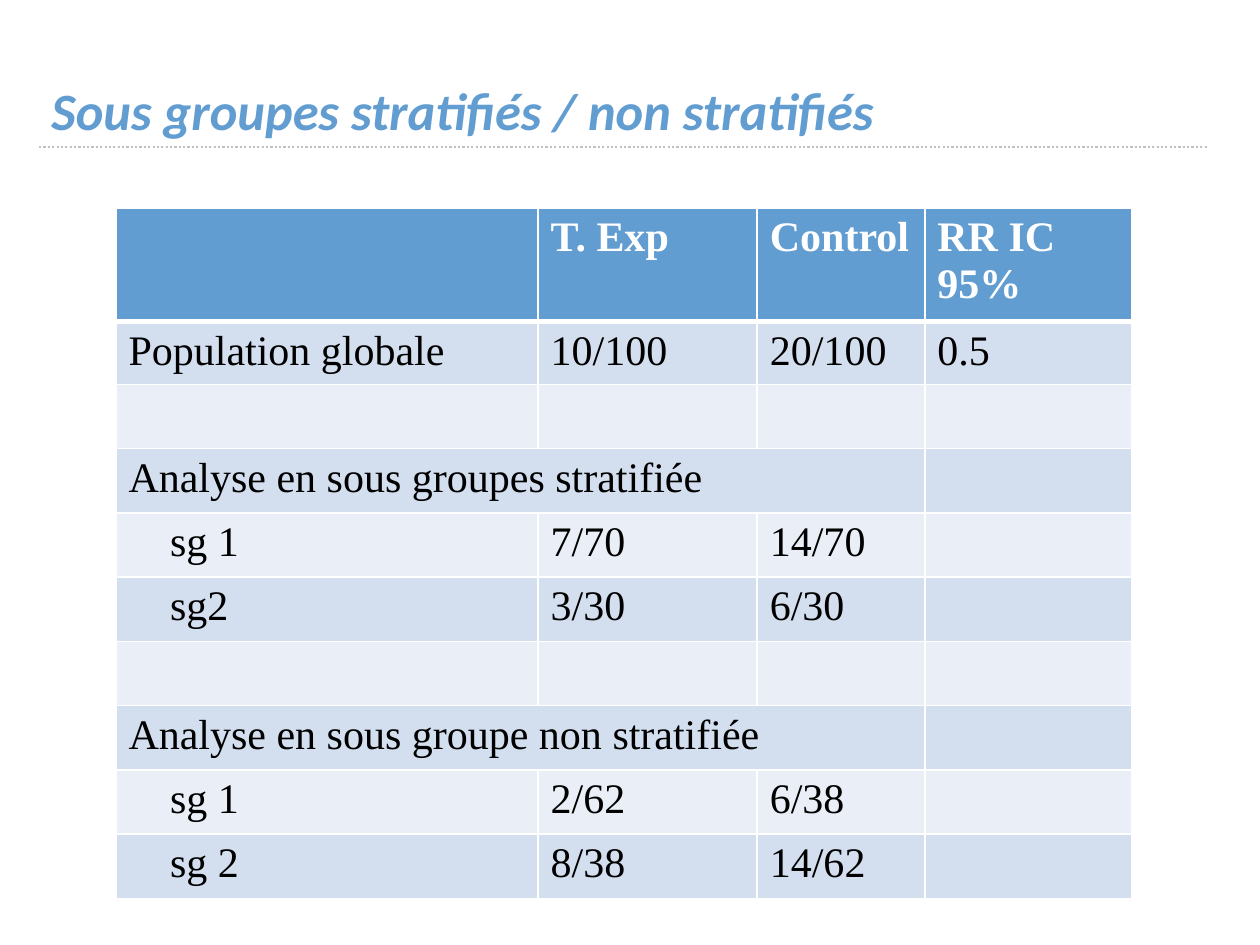
from lxml.etree import SubElement
from pptx import Presentation
from pptx.dml.color import RGBColor
from pptx.enum.dml import MSO_LINE
from pptx.enum.shapes import MSO_CONNECTOR
from pptx.enum.text import MSO_ANCHOR
from pptx.oxml import parse_xml
from pptx.oxml.ns import nsdecls, qn
from pptx.util import Inches, Pt

BLUE = RGBColor(0x62, 0x9D, 0xD1)
DARK_BAND = RGBColor(0xD3, 0xDF, 0xEE)
LIGHT_BAND = RGBColor(0xEA, 0xEF, 0xF7)
WHITE = RGBColor(0xFF, 0xFF, 0xFF)
BLACK = RGBColor(0, 0, 0)
GREY = RGBColor(0xC0, 0xC0, 0xC0)

TITLE = "Sous groupes stratifiés / non stratifiés"
ROWS = [
    ("", "T. Exp", "Control", "RR IC 95%"),
    ("Population globale", "10/100", "20/100", "0.5"),
    ("", "", "", ""),
    ("Analyse en sous groupes stratifiée", "", "", ""),
    ("sg 1", "7/70", "14/70", ""),
    ("sg2", "3/30", "6/30", ""),
    ("", "", "", ""),
    ("Analyse en sous groupe non stratifiée", "", "", ""),
    ("sg 1", "2/62", "6/38", ""),
    ("sg 2", "8/38", "14/62", ""),
]
COLUMN_WIDTHS = [3.35, 1.74, 1.33, 1.64]
ROW_HEIGHTS = [0.83, 0.47] + [0.51] * (len(ROWS) - 2)


def add_run(paragraph, text, font_name, size, color, bold=False, italic=False):
    run = paragraph.add_run()
    run.text = text
    run.font.name = font_name
    run.font.size = Pt(size)
    run.font.color.rgb = color
    run.font.bold = bold
    run.font.italic = italic


def set_borders(cell, top_width, bottom_width):
    properties = cell._tc.get_or_add_tcPr()
    widths = {"lnL": 1, "lnR": 1, "lnT": top_width, "lnB": bottom_width}
    for index, (side, width) in enumerate(widths.items()):
        border = parse_xml(
            f'<a:{side} {nsdecls("a")} w="{Pt(width)}"><a:solidFill>'
            f'<a:srgbClr val="{WHITE}"/></a:solidFill></a:{side}>'
        )
        properties.insert(index, border)


def add_title(slide):
    line = slide.shapes.add_connector(
        MSO_CONNECTOR.STRAIGHT, Inches(0.31), Inches(1.17), Inches(9.58), Inches(1.17)
    )
    line.line.color.rgb = GREY
    line.line.width = Pt(1.25)
    line.line.dash_style = MSO_LINE.ROUND_DOT
    SubElement(line._element.spPr, qn("a:effectLst"))

    title = slide.shapes.add_textbox(Inches(0.31), Inches(0.25), Inches(9.27), Inches(0.92))
    frame = title.text_frame
    frame.word_wrap = True
    frame.vertical_anchor = MSO_ANCHOR.BOTTOM
    add_run(frame.paragraphs[0], TITLE, "Calibri", 30, BLUE, bold=True, italic=True)


def add_results(slide):
    table = slide.shapes.add_table(
        len(ROWS), len(COLUMN_WIDTHS), Inches(0.92), Inches(1.65),
        Inches(sum(COLUMN_WIDTHS)), Inches(sum(ROW_HEIGHTS)),
    ).table
    for column, width in zip(table.columns, COLUMN_WIDTHS):
        column.width = Inches(width)
    for row, height in zip(table.rows, ROW_HEIGHTS):
        row.height = Inches(height)

    for r, values in enumerate(ROWS):
        header = r == 0
        band = BLUE if header else DARK_BAND if r % 2 else LIGHT_BAND
        for c, text in enumerate(values):
            cell = table.cell(r, c)
            cell.fill.solid()
            cell.fill.fore_color.rgb = band
            set_borders(cell, 3 if r == 1 else 1, 3 if header else 1)
            if text.startswith("sg"):
                cell.margin_left = Inches(0.43)
            if text:
                add_run(cell.text_frame.paragraphs[0], text, "Times New Roman", 24,
                        WHITE if header else BLACK, bold=header)
        if values[0].startswith("Analyse"):
            table.cell(r, 0).merge(table.cell(r, 2))


def main():
    presentation = Presentation()
    presentation.slide_width = Inches(10)
    presentation.slide_height = Inches(7.5)
    slide = presentation.slides.add_slide(presentation.slide_layouts[6])
    add_title(slide)
    add_results(slide)
    presentation.save("out.pptx")


if __name__ == "__main__":
    main()
